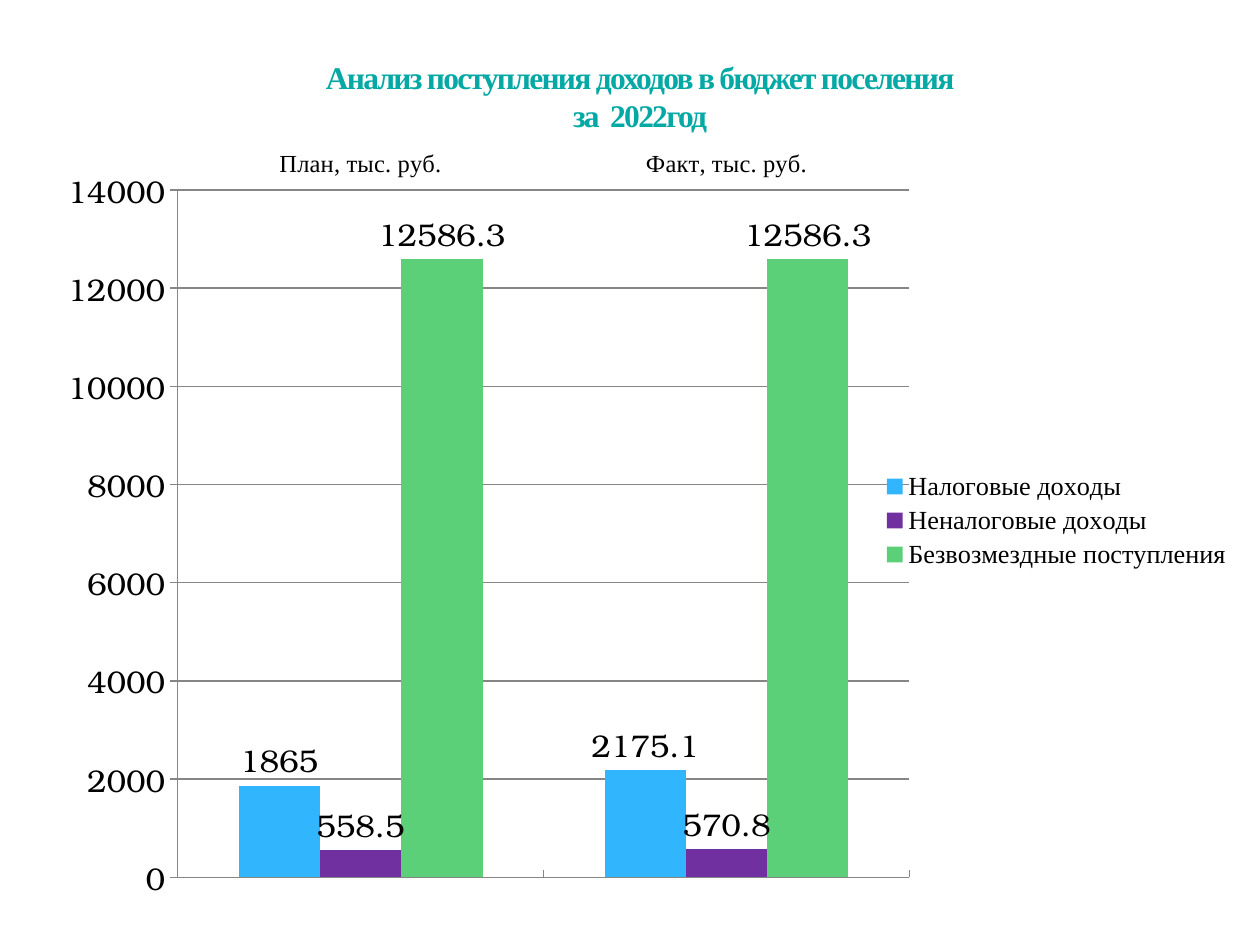
from lxml import etree
from pptx import Presentation
from pptx.chart.data import CategoryChartData
from pptx.dml.color import RGBColor
from pptx.enum.chart import (XL_CHART_TYPE, XL_LABEL_POSITION, XL_LEGEND_POSITION,
                             XL_TICK_LABEL_POSITION, XL_TICK_MARK)
from pptx.enum.text import MSO_ANCHOR, PP_ALIGN
from pptx.oxml import parse_xml
from pptx.oxml.ns import nsdecls, qn
from pptx.util import Inches, Pt

COLUMNS = XL_CHART_TYPE.COLUMN_CLUSTERED
OUTSIDE = XL_LABEL_POSITION.OUTSIDE_END
RIGHT = XL_LEGEND_POSITION.RIGHT
HIGH = XL_TICK_LABEL_POSITION.HIGH
TICK_IN, TICK_CROSS, TICK_NONE = XL_TICK_MARK.INSIDE, XL_TICK_MARK.CROSS, XL_TICK_MARK.NONE
TOP, CENTER = MSO_ANCHOR.TOP, PP_ALIGN.CENTER

COLORS = {"title": "04A8A4", "outline": "AFCCDE", "text": "000000", "axis": "868686",
          "tax": "31B6FD", "non_tax": "7030A0", "grants": "5BD078"}
SERIF, BODY = "Times New Roman", "TeX Gyre Bonum"
TITLE = "Анализ поступления доходов в бюджет поселения\vза  2022год"
CATEGORIES = ["План, тыс. руб.", "Факт, тыс. руб."]
SERIES = [("Налоговые доходы", [1865, 2175.1], "tax"),
          ("Неналоговые доходы", [558.5, 570.8], "non_tax"),
          ("Безвозмездные поступления", [12586.3, 12586.3], "grants")]
PLOT_AREA = {"x": 0.096, "y": 0.06, "w": 0.62, "h": 0.915}


def rgb(name):
    """Return the named colour."""
    return RGBColor.from_string(COLORS[name])


def set_attrs(obj, values):
    """Set attributes from a dict of format values."""
    for name, value in values.items():
        setattr(obj, name, value)


def set_font(font, size, name, color="text", bold=False):
    """Format a font."""
    set_attrs(font, {"size": Pt(size), "name": name, "bold": bold})
    font.color.rgb = rgb(color)


def add_title(s):
    """Add the condensed, outlined slide title."""
    tf = s.shapes.add_textbox(Inches(1.14), Inches(0.44), Inches(7.88), Inches(0.87)).text_frame
    set_attrs(tf, {"word_wrap": True, "vertical_anchor": TOP, "margin_top": Inches(0.02)})
    p = tf.paragraphs[0]
    p.text, p.alignment = TITLE, CENTER
    for r in p.runs:
        set_font(r.font, 18, SERIF, "title", True)
        rPr = r.font._element
        rPr.set("spc", "-100")
        rPr.insert(0, parse_xml(
            f'<a:ln {nsdecls("a")} w="{Pt(0.25)}"><a:solidFill><a:srgbClr val="{COLORS["outline"]}">'
            '<a:alpha val="25000"/></a:srgbClr></a:solidFill></a:ln>'))


def set_plot_layout(chart):
    """Fix the inner plot area as fractions of the chart."""
    plot_area = chart._chartSpace.chart.plotArea
    for old in plot_area.findall(qn("c:layout")):
        plot_area.remove(old)
    layout = etree.Element(qn("c:layout"))
    manual = etree.SubElement(layout, qn("c:manualLayout"))
    values = {"layoutTarget": "inner", "xMode": "edge", "yMode": "edge", **PLOT_AREA}
    for tag, value in values.items():
        etree.SubElement(manual, qn(f"c:{tag}")).set("val", str(value))
    plot_area.insert(0, layout)


def format_line(line):
    """Give an axis or grid line its thin grey look."""
    line.color.rgb, line.width = rgb("axis"), Pt(0.75)


def format_axes(chart):
    """Format both axes and the grid."""
    cat, val = chart.category_axis, chart.value_axis
    set_attrs(cat, {"major_tick_mark": TICK_IN, "minor_tick_mark": TICK_NONE,
                    "tick_label_position": HIGH})
    set_attrs(val, {"major_tick_mark": TICK_CROSS, "minor_tick_mark": TICK_NONE,
                    "minimum_scale": 0, "maximum_scale": 14000, "major_unit": 2000,
                    "has_major_gridlines": True})
    set_font(cat.tick_labels.font, 14, SERIF)
    set_font(val.tick_labels.font, 18, BODY)
    for part in (cat, val, val.major_gridlines):
        format_line(part.format.line)


def add_income_chart(s):
    """Add the clustered columns of planned and actual income."""
    data = CategoryChartData()
    data.categories = CATEGORIES
    for name, values, _ in SERIES:
        data.add_series(name, values)
    chart = s.shapes.add_chart(COLUMNS, Inches(0.51), Inches(1.15), Inches(9.37), Inches(5.98),
                               data).chart
    set_attrs(chart, {"has_title": False, "has_legend": True})
    set_font(chart.font, 18, BODY)
    set_attrs(chart.legend, {"position": RIGHT, "include_in_layout": False})
    set_font(chart.legend.font, 15, SERIF)
    set_attrs(chart.plots[0], {"gap_width": 150, "overlap": 0, "vary_by_categories": False})
    for series, (_, _, color) in zip(chart.plots[0].series, SERIES):
        series.format.fill.solid()
        series.format.fill.fore_color.rgb = rgb(color)
        labels = series.data_labels
        set_attrs(labels, {"show_value": True, "position": OUTSIDE})
        set_font(labels.font, 18, BODY)
    format_axes(chart)
    set_plot_layout(chart)


def main():
    """Build and save the slide."""
    prs = Presentation()
    set_attrs(prs, {"slide_width": Inches(10), "slide_height": Inches(7.5)})
    s = prs.slides.add_slide(prs.slide_layouts[6])
    add_income_chart(s)
    add_title(s)
    prs.save("out.pptx")


if __name__ == "__main__":
    main()
